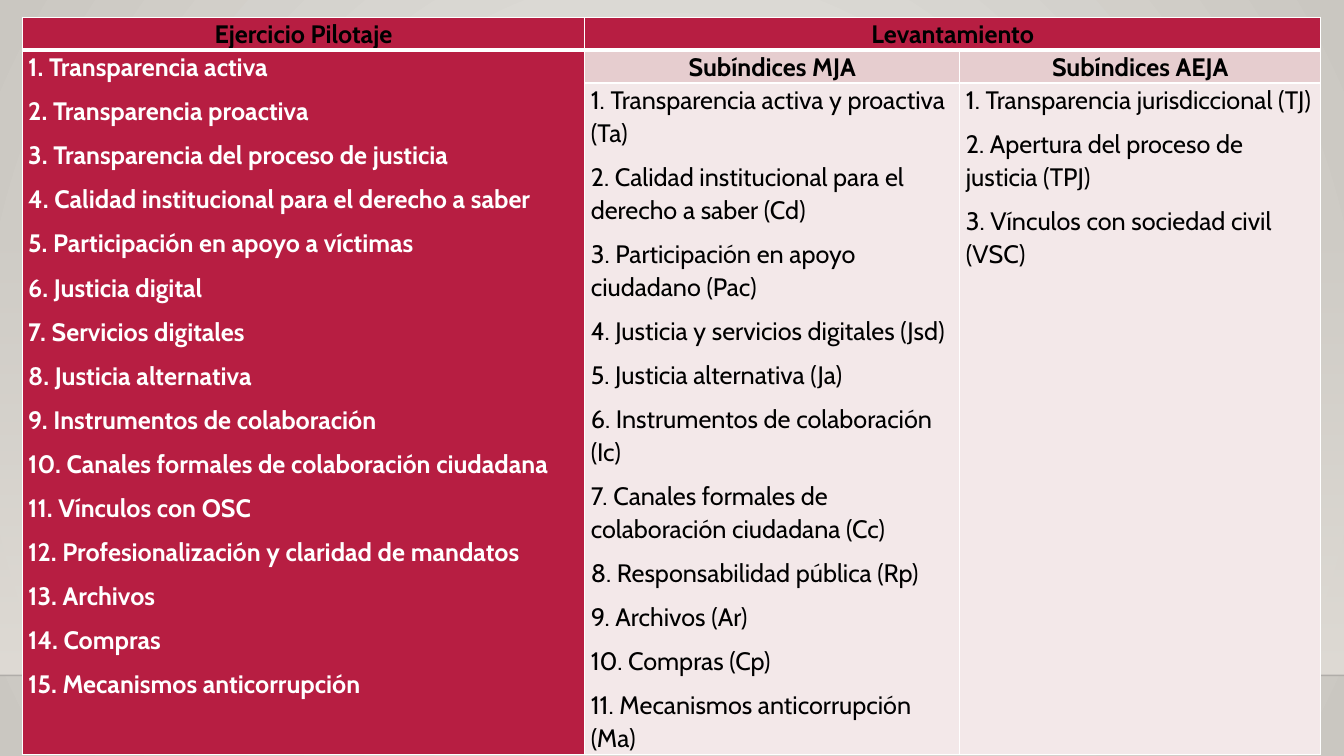
from lxml.etree import SubElement
from pptx import Presentation
from pptx.dml.color import RGBColor
from pptx.enum.shapes import MSO_CONNECTOR, MSO_SHAPE
from pptx.enum.text import PP_ALIGN
from pptx.oxml import parse_xml
from pptx.oxml.ns import nsdecls, qn
from pptx.util import Inches, Pt

CRIMSON, ROSE, PALE_ROSE = "B71E42", "E6CDCF", "F3E8E9"
WHITE, BLACK, WALL = "FFFFFF", "000000", "DFDBD5"
COLUMN_WIDTHS = (5.58, 3.72, 3.58)
ROW_HEIGHTS = (0.29, 0.29, 6.15)

PILOT_TOPICS = (
    "Transparencia activa",
    "Transparencia proactiva",
    "Transparencia del proceso de justicia",
    "Calidad institucional para el derecho a saber",
    "Participación en apoyo a víctimas",
    "Justicia digital",
    "Servicios digitales",
    "Justicia alternativa",
    "Instrumentos de colaboración",
    "Canales formales de colaboración ciudadana",
    "Vínculos con OSC",
    "Profesionalización y claridad de mandatos",
    "Archivos",
    "Compras",
    "Mecanismos anticorrupción",
)
MJA_TOPICS = (
    "Transparencia activa y proactiva (Ta)",
    "Calidad institucional para el derecho a saber (Cd)",
    "Participación en apoyo ciudadano (Pac)",
    "Justicia y servicios digitales (Jsd)",
    "Justicia alternativa (Ja)",
    "Instrumentos de colaboración (Ic)",
    "Canales formales de colaboración ciudadana (Cc)",
    "Responsabilidad pública (Rp)",
    "Archivos (Ar)",
    "Compras (Cp)",
    "Mecanismos anticorrupción (Ma)",
)
AEJA_TOPICS = (
    "Transparencia jurisdiccional (TJ)",
    "Apertura del proceso de justicia (TPJ)",
    "Vínculos con sociedad civil (VSC)",
)


def rgb(color):
    return RGBColor.from_string(color)


def set_alpha(parent, percent):
    """Set the opacity of the first colour found inside parent."""
    color = next(parent.iter(qn("a:srgbClr")))
    SubElement(color, qn("a:alpha"), val=str(percent * 1000))


def set_gradient(fill, start, end):
    fill.gradient()
    for stop, color, position in zip(fill.gradient_stops, (start, end), (0, 1)):
        stop.color.rgb = rgb(color)
        stop.position = position


def paint_background(slide):
    """Fill the slide with a gradient that runs outwards from its centre."""
    set_gradient(slide.background.fill, "ECEAE7", "CAC7C1")
    linear = next(slide.element.iter(qn("a:lin")))
    circle = parse_xml(
        f'<a:path {nsdecls("a")} path="circle">'
        '<a:fillToRect l="50000" t="50000" r="50000" b="50000"/></a:path>'
    )
    linear.getparent().replace(linear, circle)


def add_wall(slide):
    """Add the band that fades in downwards to the floor line."""
    wall = slide.shapes.add_shape(
        MSO_SHAPE.RECTANGLE, 0, Inches(2.21), Inches(13.33), Inches(4.49)
    )
    wall.shadow.inherit = False
    wall.line.fill.background()
    set_gradient(wall.fill, WALL, WALL)
    wall.fill.gradient_angle = 270
    set_alpha(wall.element.spPr, 0)


def add_floor_line(slide):
    floor = slide.shapes.add_connector(
        MSO_CONNECTOR.STRAIGHT, 0, Inches(6.7), Inches(13.33), Inches(6.7)
    )
    floor.line.color.rgb = rgb("000001")
    floor.line.width = Pt(1)
    properties = floor.element.spPr
    set_alpha(properties, 20)
    SubElement(properties, qn("a:effectLst"))


def set_borders(cell, bottom_width):
    widths = {"lnL": 1, "lnR": 1, "lnT": 1, "lnB": bottom_width}
    properties = cell._tc.get_or_add_tcPr()
    for index, (side, width) in enumerate(widths.items()):
        border = parse_xml(
            f'<a:{side} {nsdecls("a")} w="{Pt(width)}"><a:solidFill>'
            f'<a:srgbClr val="{WHITE}"/></a:solidFill></a:{side}>'
        )
        properties.insert(index, border)


def style_cell(cell, fill, bottom_width=1):
    cell.fill.solid()
    cell.fill.fore_color.rgb = rgb(fill)
    cell.margin_left = cell.margin_right = Inches(0.06)
    cell.margin_top = cell.margin_bottom = 0
    set_borders(cell, bottom_width)


def write_cell(cell, text, color=BLACK, bold=True, align=PP_ALIGN.LEFT):
    cell.text_frame.text = text
    for paragraph in cell.text_frame.paragraphs:
        paragraph.alignment = align
        paragraph.line_spacing = 1.07
        paragraph.space_after = Pt(8)
        for run in paragraph.runs:
            run.font.name = "Cabin"
            run.font.size = Pt(18)
            run.font.bold = bold
            run.font.color.rgb = rgb(color)


def numbered(topics):
    return "\n".join(f"{n}. {topic}" for n, topic in enumerate(topics, 1))


def add_index_table(slide):
    table = slide.shapes.add_table(
        len(ROW_HEIGHTS), len(COLUMN_WIDTHS), Inches(0.22), Inches(0.17),
        Inches(sum(COLUMN_WIDTHS)), Inches(sum(ROW_HEIGHTS)),
    ).table
    for column, width in zip(table.columns, COLUMN_WIDTHS):
        column.width = Inches(width)
    for row, height in zip(table.rows, ROW_HEIGHTS):
        row.height = Inches(height)

    for column in range(3):
        style_cell(table.cell(0, column), CRIMSON, bottom_width=3)
        style_cell(table.cell(1, column), ROSE if column else CRIMSON)
        style_cell(table.cell(2, column), PALE_ROSE if column else CRIMSON)
    table.cell(0, 1).merge(table.cell(0, 2))
    table.cell(1, 0).merge(table.cell(2, 0))

    headings = {
        (0, 0): "Ejercicio Pilotaje",
        (0, 1): "Levantamiento",
        (1, 1): "Subíndices MJA",
        (1, 2): "Subíndices AEJA",
    }
    for place, heading in headings.items():
        write_cell(table.cell(*place), heading, align=PP_ALIGN.CENTER)
    write_cell(table.cell(1, 0), numbered(PILOT_TOPICS), WHITE)
    write_cell(table.cell(2, 1), numbered(MJA_TOPICS), bold=False)
    write_cell(table.cell(2, 2), numbered(AEJA_TOPICS), bold=False)


def main():
    deck = Presentation()
    deck.slide_width, deck.slide_height = Inches(13.33), Inches(7.5)
    slide = deck.slides.add_slide(deck.slide_layouts[6])
    paint_background(slide)
    add_wall(slide)
    add_floor_line(slide)
    add_index_table(slide)
    deck.save("out.pptx")


if __name__ == "__main__":
    main()
